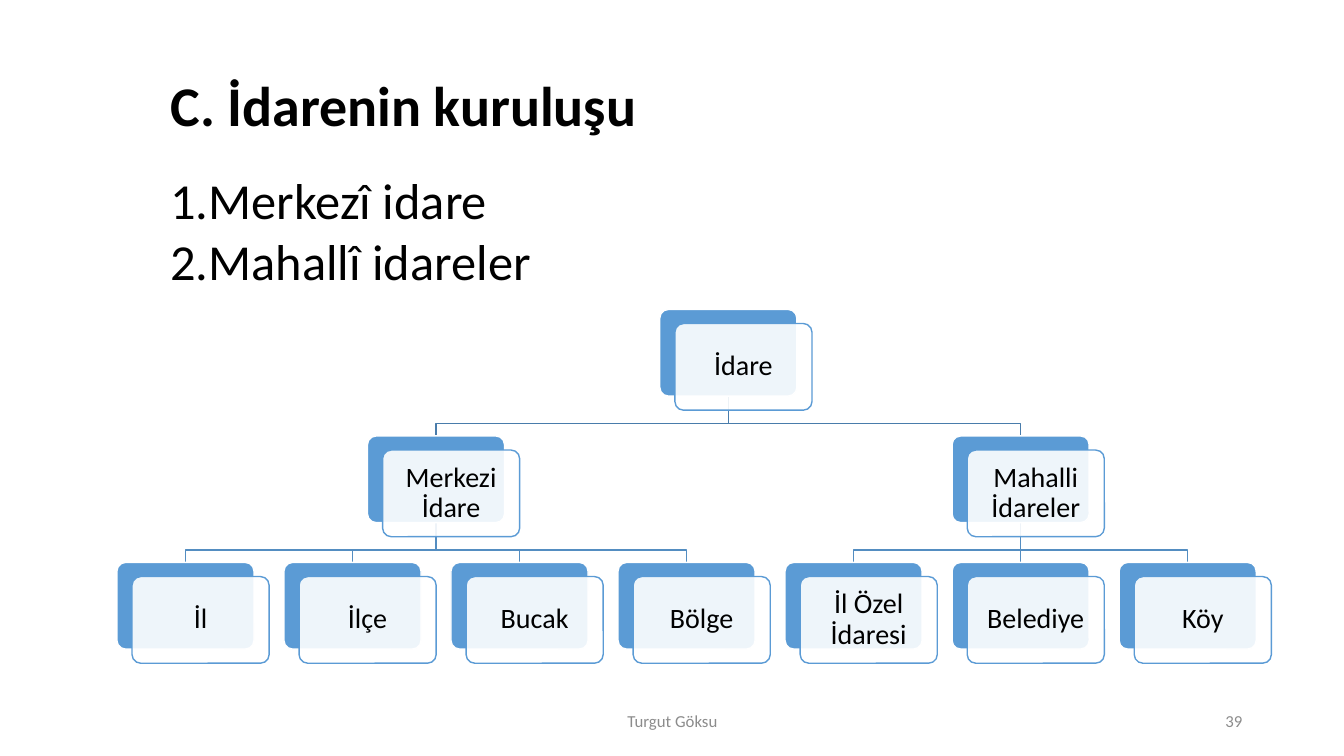
"""Builds a slide with a heading, a numbered list and an organisation chart."""
from dataclasses import dataclass

from lxml import etree
from pptx import Presentation
from pptx.dml.color import RGBColor
from pptx.enum.shapes import MSO_CONNECTOR, MSO_SHAPE
from pptx.enum.text import MSO_ANCHOR, PP_ALIGN
from pptx.oxml.ns import qn
from pptx.util import Inches, Pt

ROUNDED = MSO_SHAPE.ROUNDED_RECTANGLE
STRAIGHT = MSO_CONNECTOR.STRAIGHT
TOP, MIDDLE = MSO_ANCHOR.TOP, MSO_ANCHOR.MIDDLE
LEFT, CENTER, RIGHT = PP_ALIGN.LEFT, PP_ALIGN.CENTER, PP_ALIGN.RIGHT

BLACK = RGBColor(0x00, 0x00, 0x00)
WHITE = RGBColor(0xFF, 0xFF, 0xFF)
GRAY = RGBColor(0x8C, 0x8C, 0x8C)
BLUE = RGBColor(0x5B, 0x9B, 0xD5)
BRANCH_COLORS = (RGBColor(0x49, 0x7C, 0xAB), RGBColor(0x53, 0x8D, 0xC1))

FONT = "Calibri"
BOX_WIDTH, BOX_HEIGHT = 1.36, 0.86
FRONT_OFFSET_X, FRONT_OFFSET_Y = 0.15, 0.14
FIRST_LEFT, LEAF_PITCH = 1.16, (11.1 - 1.16) / 6
FIRST_TOP, LEVEL_PITCH = 3.07, (5.58 - 3.07) / 2
BEND_DROP = 0.27


@dataclass
class Unit:
    """One unit of the administration, with the units below it."""
    name: str
    children: tuple["Unit", ...] = ()
    level: int = 0
    left: float = 0.0

    @property
    def top(self) -> float:
        return FIRST_TOP + self.level * LEVEL_PITCH

    @property
    def center(self) -> float:
        return self.left + BOX_WIDTH / 2


ADMINISTRATION = Unit("İdare", (
    Unit("Merkezi İdare", (Unit("İl"), Unit("İlçe"), Unit("Bucak"), Unit("Bölge"))),
    Unit("Mahalli İdareler", (Unit("İl Özel İdaresi"), Unit("Belediye"), Unit("Köy"))),
))


def write_text(shape, *lines: str, size: float, color: RGBColor = BLACK, bold: bool = False,
               align=LEFT, anchor=TOP, line_spacing: float = 1.0,
               inset: float | None = None, numbered: bool = False) -> None:
    """Fill a shape with one formatted paragraph per line."""
    frame = shape.text_frame
    frame.word_wrap = True
    frame.vertical_anchor = anchor
    if inset is not None:
        frame.margin_left = frame.margin_right = Inches(inset)
        frame.margin_top = frame.margin_bottom = Inches(inset)
    frame.text = "\n".join(lines)
    for paragraph in frame.paragraphs:
        paragraph.alignment = align
        paragraph.line_spacing = line_spacing
        font = paragraph.runs[0].font
        font.name, font.size, font.bold = FONT, Pt(size), bold
        font.color.rgb = color
        if numbered:
            properties = paragraph._p.get_or_add_pPr()
            properties.set("marL", str(Inches(0.38)))
            properties.set("indent", str(-Inches(0.38)))
            etree.SubElement(properties, qn("a:buAutoNum"), type="arabicPeriod")


def add_text(slide, *lines: str, left: float, top: float, width: float, height: float,
             **text_format) -> None:
    """Add a text box."""
    box = slide.shapes.add_textbox(Inches(left), Inches(top), Inches(width), Inches(height))
    write_text(box, *lines, **text_format)


def place_units(unit: Unit, level: int = 0, next_leaf: int = 0) -> int:
    """Space the leaves evenly and centre each parent over its children."""
    unit.level = level
    if not unit.children:
        unit.left = FIRST_LEFT + next_leaf * LEAF_PITCH
        return next_leaf + 1
    for child in unit.children:
        next_leaf = place_units(child, level + 1, next_leaf)
    unit.left = (unit.children[0].left + unit.children[-1].left) / 2
    return next_leaf


def add_branch(slide, parent: Unit, child: Unit) -> None:
    """Draw the line from a parent down to a child."""
    start, end = Inches(parent.center), Inches(child.center)
    top, bottom = Inches(parent.top + BOX_HEIGHT), Inches(child.top)
    if abs(parent.center - child.center) < 0.01:
        branch = slide.shapes.add_connector(STRAIGHT, start, top, end, bottom)
        etree.SubElement(branch._element.spPr, qn("a:effectLst"))
    else:
        bend = Inches(parent.top + BOX_HEIGHT + BEND_DROP)
        builder = slide.shapes.build_freeform(start, top)
        builder.add_line_segments([(start, bend), (end, bend), (end, bottom)], close=False)
        branch = builder.convert_to_shape()
        branch.fill.background()
        branch.shadow.inherit = False
    branch.line.color.rgb = BRANCH_COLORS[parent.level]
    branch.line.width = Pt(1)


def add_box(slide, left: float, top: float, fill: RGBColor, line: RGBColor):
    """Add one rounded box of the chart."""
    box = slide.shapes.add_shape(ROUNDED, Inches(left), Inches(top),
                                 Inches(BOX_WIDTH), Inches(BOX_HEIGHT))
    box.adjustments[0] = 0.1
    box.shadow.inherit = False
    box.fill.solid()
    box.fill.fore_color.rgb = fill
    box.line.color.rgb = line
    box.line.width = Pt(1)
    return box


def add_branches(slide, unit: Unit) -> None:
    """Draw all lines below a unit."""
    for child in unit.children:
        add_branch(slide, unit, child)
        add_branches(slide, child)


def add_units(slide, unit: Unit) -> None:
    """Draw a unit as a blue box behind a translucent card, then its children."""
    add_box(slide, unit.left, unit.top, BLUE, WHITE)
    card = add_box(slide, unit.left + FRONT_OFFSET_X, unit.top + FRONT_OFFSET_Y, WHITE, BLUE)
    fill_color = card._element.spPr.find(qn("a:solidFill"))[0]
    etree.SubElement(fill_color, qn("a:alpha"), val="90000")
    write_text(card, unit.name, size=20, align=CENTER, anchor=MIDDLE,
               line_spacing=0.9, inset=0.08)
    for child in unit.children:
        add_units(slide, child)


def main() -> None:
    """Build and save the presentation."""
    presentation = Presentation()
    presentation.slide_width, presentation.slide_height = Inches(13.33), Inches(7.5)
    slide = presentation.slides.add_slide(presentation.slide_layouts[5])

    title = slide.shapes.title
    title.left, title.top = Inches(1.59), Inches(0.65)
    title.width, title.height = Inches(11.03), Inches(0.8)
    write_text(title, "C. İdarenin kuruluşu", size=40, bold=True)
    add_text(slide, "Merkezî idare", "Mahallî idareler", left=1.59, top=1.63,
             width=11.03, height=1.31, size=36, numbered=True)
    add_text(slide, "Turgut Göksu", left=4.42, top=6.95, width=4.5, height=0.4,
             size=12, color=GRAY, align=CENTER, anchor=MIDDLE)
    add_text(slide, "39", left=9.42, top=6.95, width=3, height=0.4,
             size=12, color=GRAY, align=RIGHT, anchor=MIDDLE)

    place_units(ADMINISTRATION)
    add_branches(slide, ADMINISTRATION)
    add_units(slide, ADMINISTRATION)
    presentation.save("out.pptx")


if __name__ == "__main__":
    main()
